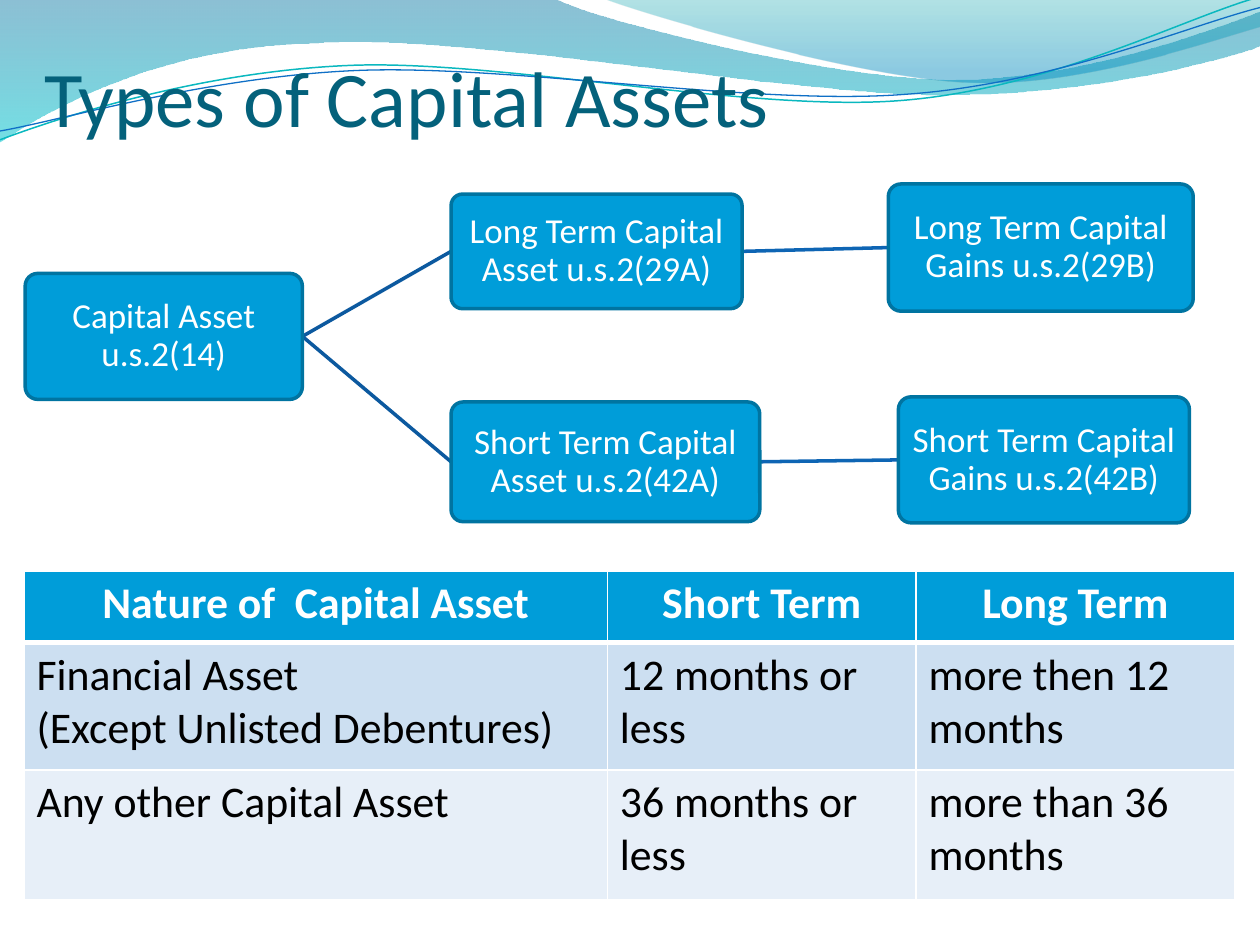
from typing import NamedTuple

from lxml import etree
from pptx import Presentation
from pptx import util as u
from pptx.dml.color import RGBColor
from pptx.enum import shapes, text
from pptx.oxml import ns

FONT = "Calibri"
WHITE = "FFFFFF"
BLUE = "009DD9"


class Box(NamedTuple):
    label: str
    left: float
    top: float
    width: float
    height: float


class Link(NamedTuple):
    start: str
    end: str
    hue: str


class Stop(NamedTuple):
    place: float
    hue: str
    alpha: int


class Band(NamedTuple):
    edge: list
    stops: list


class Wave(NamedTuple):
    edge: list
    hue: str
    width: float


BANDS = [
    Band([(0, 0), (4.4, -0.01),
          (4.76, 0.17, 6.64, 0.63, 7.58, 0.63),
          (8.53, 0.63, 9.58, 0.26, 10, 0.09), (10.01, 0.36),
          (9.83, 0.44, 8.7, 0.76, 7.46, 0.75),
          (6.22, 0.75, 3.82, 0.28, 2.57, 0.34),
          (1.29, 0.36, 0.46, 0.83, -0.01, 1.13), (0, 0)],
         [Stop(0, "0074A1", 45), Stop(1, "00C6CF", 55)]),
    Band([(4.79, -0.01),
          (5.09, 0.11, 6.82, 0.62, 7.69, 0.65),
          (8.56, 0.69, 9.61, 0.32, 10, 0.21), (10, 0), (4.79, -0.01)],
         [Stop(0, "00A1A9", 30), Stop(0.8, "008BBF", 45)]),
]
WAVES = [
    Wave([(0, 1.11), (0.48, 0.93, 1.58, 0.57, 2.77, 0.52),
          (3.95, 0.47, 5.93, 0.89, 7.13, 0.8),
          (8.33, 0.71, 9.38, 0.15, 9.98, -0.02)], "0AB8BF", 0.85),
    Wave([(0, 1.04), (0.47, 0.96, 1.64, 0.61, 2.83, 0.56),
          (4.03, 0.51, 5.97, 0.84, 7.17, 0.75),
          (8.36, 0.67, 9.41, 0.21, 10, 0.06)], "0F6FC6", 0.75),
]
BOXES = {
    "root": Box("Capital Asset u.s.2(14)", 0.2, 2.17, 2.2, 1),
    "short": Box("Short Term Capital Asset u.s.2(42A)", 3.58, 3.19, 2.45, 0.95),
    "short gain": Box("Short Term Capital Gains u.s.2(42B)", 7.13, 3.15, 2.31, 1),
    "long": Box("Long Term Capital Asset u.s.2(29A)", 3.58, 1.54, 2.31, 0.91),
    "long gain": Box("Long Term Capital Gains u.s.2(29B)", 7.05, 1.46, 2.42, 1.01),
}
LINKS = [
    Link("root", "short", "0C599F"),
    Link("short", "short gain", "0E65B4"),
    Link("root", "long", "0C599F"),
    Link("long", "long gain", "0E65B4"),
]
ROWS = [
    ["Nature of  Capital Asset", "Short Term", "Long Term"],
    ["Financial Asset\n(Except Unlisted Debentures)", "12 months or less",
     "more then 12 months"],
    ["Any other Capital Asset", "36 months or less", "more than 36 months"],
]
WIDTHS = [4.63, 2.45, 2.53]
HEIGHTS = [0.57, 1.01, 1.03]
FILLS = [BLUE, "CCDFF1", "E7EFF8"]


def tint(hue: str) -> RGBColor:
    return RGBColor.from_string(hue)


def style(frame, size: float, hue: str, bold: bool = False, align=None) -> None:
    for para in frame.paragraphs:
        para.alignment = align
        for run in para.runs:
            font = run.font
            font.name, font.size, font.bold = FONT, u.Pt(size), bold
            font.color.rgb = tint(hue)


def inset(frame, left: float, top: float, right: float, base: float) -> None:
    frame.margin_left, frame.margin_top = u.Inches(left), u.Inches(top)
    frame.margin_right, frame.margin_bottom = u.Inches(right), u.Inches(base)


def outline(slide, edge: list, close: bool):
    dots = [(u.Inches(part[i]), u.Inches(part[i + 1]))
            for part in edge for i in range(0, len(part), 2)]
    pen = slide.shapes.build_freeform(*dots[0])
    pen.add_line_segments(dots[1:], close=close)
    shape = pen.convert_to_shape()
    shape.shadow.inherit = False
    legs = iter(shape.element.xpath(".//a:path/a:lnTo"))
    for part in edge[1:]:
        leg = next(legs)
        if len(part) == 6:
            leg.tag = ns.qn("a:cubicBezTo")
            for _ in range(2):
                rest = next(legs)
                leg.append(rest[0])
                rest.getparent().remove(rest)
    return shape


def add_band(slide, band: Band) -> None:
    shape = outline(slide, band.edge, True)
    shape.line.fill.background()
    shape.fill.gradient()
    shape.fill.gradient_angle = 270
    for mark, stop in zip(shape.fill.gradient_stops, band.stops):
        mark.position = stop.place
        mark.color.rgb = tint(stop.hue)
    for node, stop in zip(shape.element.xpath(".//a:gs/a:srgbClr"), band.stops):
        etree.SubElement(node, ns.qn("a:alpha"), val=str(stop.alpha * 1000))


def add_wave(slide, wave: Wave) -> None:
    shape = outline(slide, wave.edge, False)
    shape.fill.background()
    shape.line.color.rgb = tint(wave.hue)
    shape.line.width = u.Pt(wave.width)


def add_title(slide) -> None:
    area = slide.shapes.add_textbox(*map(u.Inches, (0.35, 0.21, 6.77, 0.93)))
    frame = area.text_frame
    frame.word_wrap = True
    frame.vertical_anchor = text.MSO_ANCHOR.BOTTOM
    inset(frame, 0, 0.05, 0, 0)
    frame.text = "Types of Capital Assets"
    style(frame, 45, "04617B")


def add_link(slide, link: Link) -> None:
    start, end = BOXES[link.start], BOXES[link.end]
    ends = (start.left + start.width, start.top + start.height / 2,
            end.left, end.top + end.height / 2)
    line = slide.shapes.add_connector(
        shapes.MSO_CONNECTOR.STRAIGHT, *map(u.Inches, ends))
    line.line.color.rgb = tint(link.hue)
    line.line.width = u.Pt(2)
    etree.SubElement(line.element.spPr, ns.qn("a:effectLst"))


def add_box(slide, box: Box) -> None:
    shape = slide.shapes.add_shape(
        shapes.MSO_SHAPE.ROUNDED_RECTANGLE, *map(u.Inches, box[1:]))
    shape.adjustments[0] = 0.1
    shape.shadow.inherit = False
    shape.fill.solid()
    shape.fill.fore_color.rgb = tint(BLUE)
    shape.line.color.rgb = tint("0074A1")
    shape.line.width = u.Pt(2)
    frame = shape.text_frame
    frame.word_wrap = True
    frame.vertical_anchor = text.MSO_ANCHOR.MIDDLE
    inset(frame, 0.01, 0.01, 0.01, 0.01)
    frame.text = box.label
    frame.paragraphs[0].line_spacing = 0.9
    style(frame, 20, WHITE, align=text.PP_ALIGN.CENTER)


def rule(cell, row: int) -> None:
    props = cell._tc.get_or_add_tcPr()
    sizes = {"L": 1, "R": 1, "T": 3 if row == 1 else 1, "B": 3 if row == 0 else 1}
    for side, size in sizes.items():
        line = etree.SubElement(props, ns.qn("a:ln" + side), w=str(u.Pt(size)))
        fill = etree.SubElement(line, ns.qn("a:solidFill"))
        etree.SubElement(fill, ns.qn("a:srgbClr"), val=WHITE)


def add_grid(slide) -> None:
    area = map(u.Inches, (0.19, 4.53, sum(WIDTHS), sum(HEIGHTS)))
    grid = slide.shapes.add_table(len(ROWS), len(WIDTHS), *area).table
    for col, width in zip(grid.columns, WIDTHS):
        col.width = u.Inches(width)
    for r, labels in enumerate(ROWS):
        grid.rows[r].height = u.Inches(HEIGHTS[r])
        head = r == 0
        for c, label in enumerate(labels):
            cell = grid.cell(r, c)
            rule(cell, r)
            cell.fill.solid()
            cell.fill.fore_color.rgb = tint(FILLS[r])
            cell.text_frame.text = label
            style(cell.text_frame, 25, WHITE if head else "000000", head,
                  text.PP_ALIGN.CENTER if head else None)


def main() -> None:
    deck = Presentation()
    deck.slide_width, deck.slide_height = u.Inches(10), u.Inches(7.5)
    slide = deck.slides.add_slide(deck.slide_layouts[6])
    for band in BANDS:
        add_band(slide, band)
    for wave in WAVES:
        add_wave(slide, wave)
    add_title(slide)
    for link in LINKS:
        add_link(slide, link)
    for box in BOXES.values():
        add_box(slide, box)
    add_grid(slide)
    deck.save("out.pptx")


if __name__ == "__main__":
    main()
